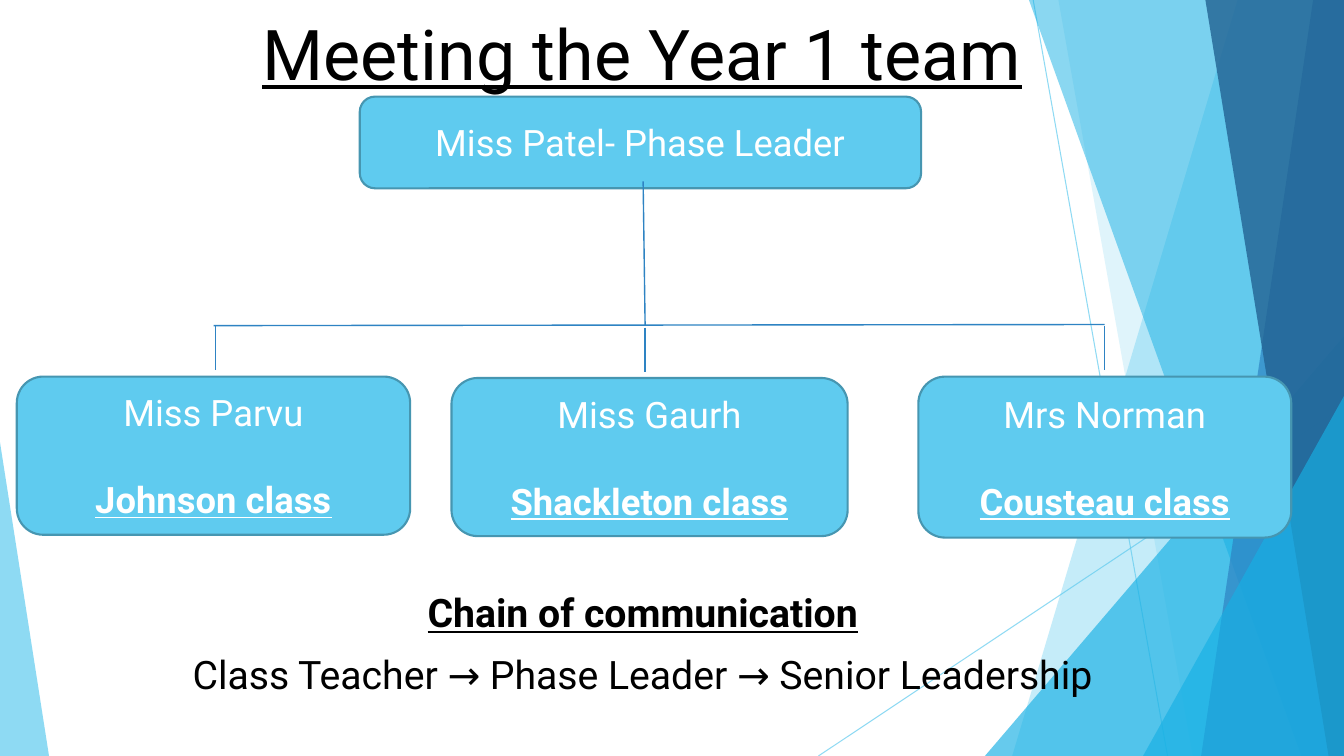
from pptx import Presentation
from pptx.dml.color import RGBColor
from pptx.enum.shapes import MSO_CONNECTOR, MSO_SHAPE
from pptx.enum.text import MSO_ANCHOR, MSO_AUTO_SIZE, PP_ALIGN
from pptx.oxml.ns import qn
from pptx.oxml.xmlchemy import OxmlElement
from pptx.util import Pt

W, H = 960, 540
SKY, CYAN, BLUE, NAVY = "5FCBEF", "17B0E4", "2E83C3", "226292"
BLACK, WHITE, EDGE = "000000", "FFFFFF", "4696B1"

BANDS = [
    (884, 723, SKY, 36),
    (756, 852, SKY, 20),
    (735, 929.5, CYAN, 50),
    (938, 858, BLUE, 70),
    (861, 949, NAVY, 80),
]
TEACHERS = [
    ((322.5, 270, 283, 113), "Miss Gaurh", "Shackleton class"),
    ((656, 269, 266.4, 115), "Mrs Norman", "Cousteau class"),
    ((12, 269, 281, 113), "Miss Parvu", "Johnson class"),
]
LINKS = [
    (152.7, 232.6, 789.1, 231.8),
    (154.1, 232.6, 154.1, 264.4),
    (460.8, 234, 460.8, 265.8),
    (789.1, 232.6, 789.1, 264.4),
    (459.4, 129.6, 460.8, 232.6),
]


def rgb(color):
    return RGBColor.from_string(color)


def set_alpha(sp, percent):
    alpha = OxmlElement("a:alpha")
    alpha.set("val", str(percent * 1000))
    next(sp.element.iter(qn("a:srgbClr"))).append(alpha)


def fill_plain(sp, color, alpha):
    sp.shadow.inherit = False
    sp.fill.solid()
    sp.fill.fore_color.rgb = rgb(color)
    sp.line.fill.background()
    set_alpha(sp, alpha)


def add_line(s, ends, color, width):
    line = s.shapes.add_connector(MSO_CONNECTOR.STRAIGHT, *map(Pt, ends))
    line.line.color.rgb = rgb(color)
    line.line.width = Pt(width)
    line.element.spPr.append(OxmlElement("a:effectLst"))
    return line


def add_band(s, top_x, bottom_x, color, alpha):
    builder = s.shapes.build_freeform(Pt(top_x), 0)
    corners = [(W, 0), (W, H), (bottom_x, H)]
    builder.add_line_segments([(Pt(x), Pt(y)) for x, y in corners], close=True)
    fill_plain(builder.convert_to_shape(), color, alpha)


def add_triangle(s, box, apex, color, alpha):
    sp = s.shapes.add_shape(MSO_SHAPE.ISOSCELES_TRIANGLE, *map(Pt, box))
    sp.adjustments[0] = apex
    fill_plain(sp, color, alpha)


def write(tf, lines, size, color, gap=0, anchor=MSO_ANCHOR.TOP):
    frame = {"word_wrap": True, "auto_size": MSO_AUTO_SIZE.NONE, "vertical_anchor": anchor}
    for name, value in frame.items():
        setattr(tf, name, value)
    for i, (text, style) in enumerate(lines):
        p = tf.paragraphs[0] if i == 0 else tf.add_paragraph()
        p.alignment = PP_ALIGN.CENTER
        if i:
            p.space_before = Pt(gap)
        r = p.add_run()
        r.text = text
        r.font.color.rgb = rgb(color)
        for name, value in {"name": "Roboto", "size": Pt(size), **style}.items():
            setattr(r.font, name, value)


def add_card(s, box, lines):
    sp = s.shapes.add_shape(MSO_SHAPE.ROUNDED_RECTANGLE, *map(Pt, box))
    sp.shadow.inherit = False
    sp.fill.solid()
    sp.fill.fore_color.rgb = rgb(SKY)
    sp.line.color.rgb = rgb(EDGE)
    sp.line.width = Pt(1.5)
    write(sp.text_frame, lines, 26, WHITE, 31, MSO_ANCHOR.MIDDLE)


def add_backdrop(s):
    for ends in [(738, 0, 834, H), (W, 290, 584.6, H)]:
        set_alpha(add_line(s, ends, SKY, 0.75), 70)
    for band in BANDS[:2]:
        add_band(s, *band)
    add_triangle(s, (703.5, 240, 256.5, 300), 1, CYAN, 66)
    for band in BANDS[2:]:
        add_band(s, *band)
    add_triangle(s, (816.5, 283, 143.5, 257), 1, CYAN, 66)
    add_triangle(s, (0, 316, 35, 224), 0, SKY, 70)


def add_title(s, text):
    title = s.shapes.title
    box = {"left": 120, "top": 3.6, "width": 677, "height": 103.7}
    for name, value in box.items():
        setattr(title, name, Pt(value))
    write(title.text_frame, [(text, {"underline": True})], 50, BLACK)
    s.shapes.element.append(title.element)


def main():
    prs = Presentation()
    prs.slide_width, prs.slide_height = Pt(W), Pt(H)
    s = prs.slides.add_slide(prs.slide_layouts[5])
    heading = {"bold": True, "underline": True}

    add_backdrop(s)
    add_title(s, "Meeting the Year 1 team")
    for box, teacher, class_name in TEACHERS:
        add_card(s, box, [(teacher, {}), (class_name, heading)])
    add_card(s, (257, 69, 401, 65.5), [("Miss Patel- Phase Leader", {})])
    for ends in LINKS:
        add_line(s, ends, BLUE, 1)

    chain = s.shapes.add_textbox(*map(Pt, (87, 417, 744, 93)))
    write(chain.text_frame, [
        ("Chain of communication", heading),
        ("Class Teacher → Phase Leader → Senior Leadership", {}),
    ], 28, BLACK, 10)
    prs.save("out.pptx")


if __name__ == "__main__":
    main()
